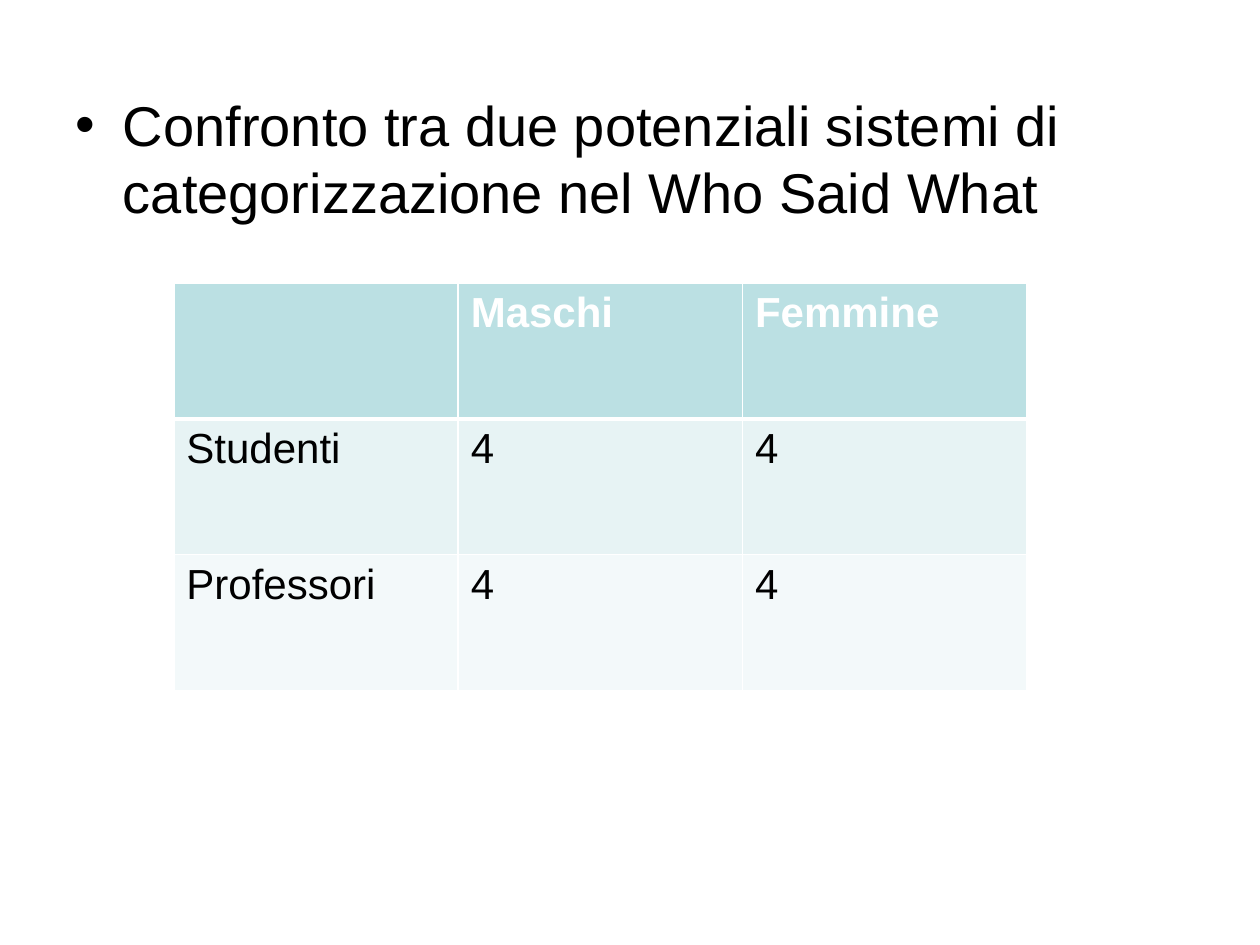
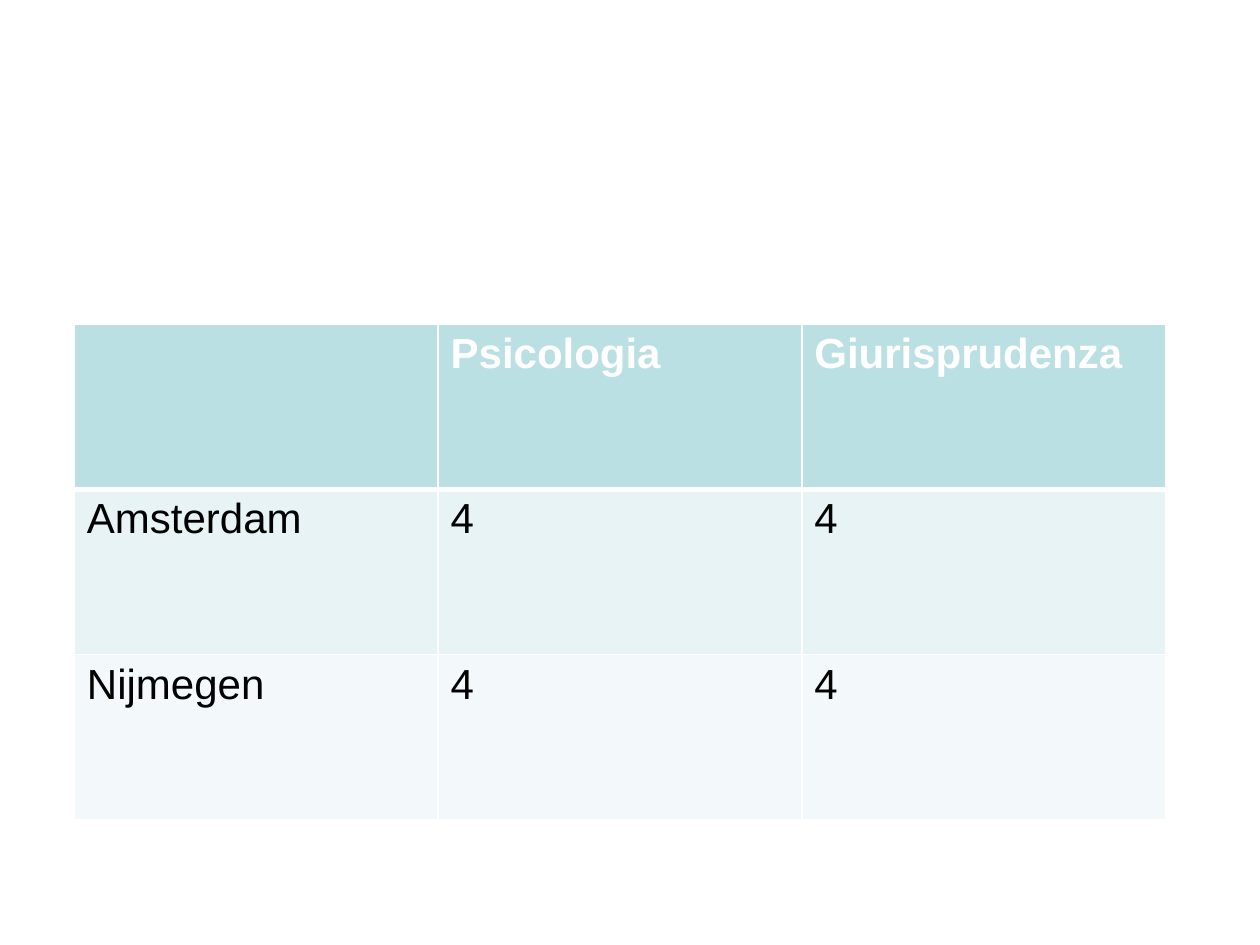
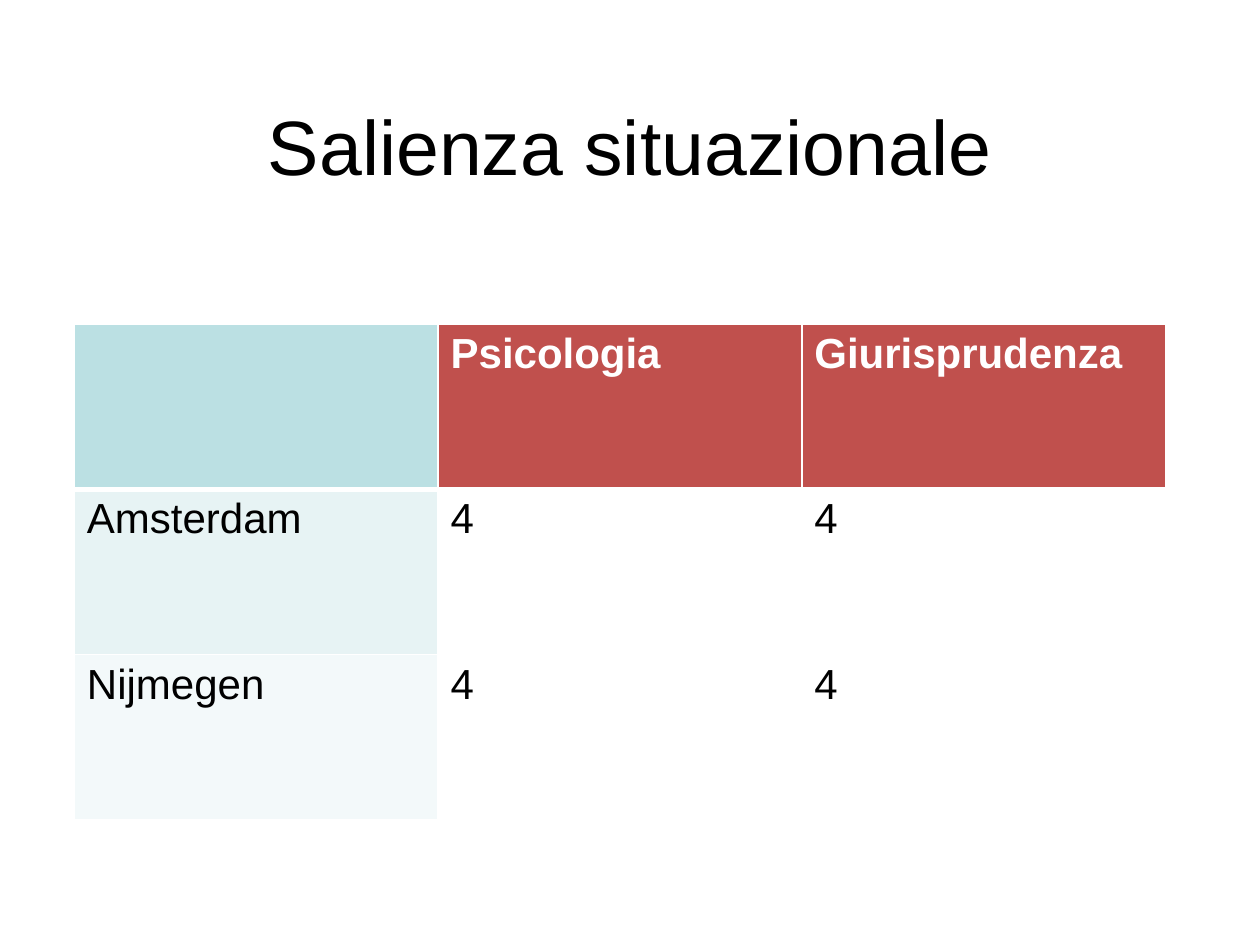
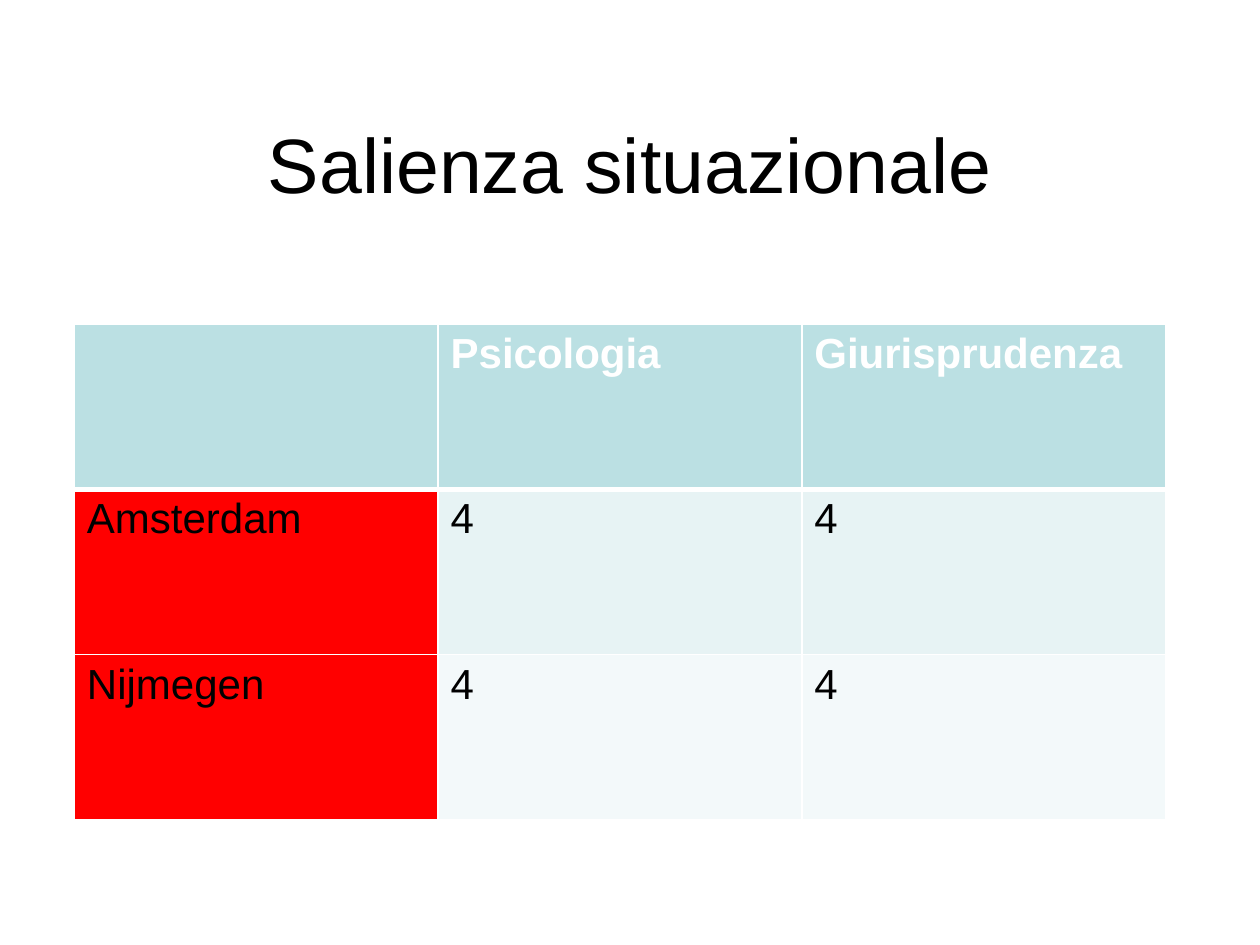
"""Build four slides on crossed categories, each with a three-by-three table."""
from lxml import etree
from pptx import Presentation
from pptx.dml.color import RGBColor
from pptx.enum import text
from pptx.oxml import ns
from pptx.util import Inches, Pt

FONT = "Arial"
BLACK, WHITE = "000000", "FFFFFF"
BANDS = ["BBE0E3", "E7F3F4", "F3F9FA"]
BRICK, RED = "C0504D", "FF0000"
BODY, TITLE, BLANK = 1, 5, 6

ROLES = [["", "Maschi", "Femmine"], ["Studenti", "4", "4"], ["Professori", "4", "4"]]
CITIES = [["", "Psicologia", "Giurisprudenza"], ["Amsterdam", "4", "4"], ["Nijmegen", "4", "4"]]
SMALL = (1.38, 2.25, 6.77, 3.23)
LARGE = (0.59, 2.57, 8.66, 3.94)

PLAIN = [[band] * 3 for band in BANDS]
COLS = [[BANDS[0], BRICK, BRICK], [BANDS[1], None, None], [BANDS[2], None, None]]
ROWS = [PLAIN[0], [RED] + PLAIN[1][1:], [RED] + PLAIN[2][1:]]

POINT = "Confronto tra due potenziali sistemi di categorizzazione nel Who Said What"
HEAD = "Salienza situazionale"

SLIDES = [
    dict(kind=BODY, words=POINT, box=(0.5, 0.67, 9.07, 6.63), rows=ROLES, area=SMALL, fills=PLAIN),
    dict(kind=BLANK, rows=CITIES, area=LARGE, fills=PLAIN),
    dict(kind=TITLE, words=HEAD, box=(0.75, 0.52, 8.5, 1.25), rows=CITIES, area=LARGE, fills=COLS),
    dict(kind=TITLE, words=HEAD, box=(0.75, 0.67, 8.5, 1.25), rows=CITIES, area=LARGE, fills=ROWS),
]


def rgb(code):
    """Turn a hex string into a colour."""
    return RGBColor.from_string(code)


def style(frame, size, color, bold=False):
    """Format every run of a text frame."""
    for par in frame.paragraphs:
        for run in par.runs:
            run.font.name = FONT
            run.font.size = Pt(size)
            run.font.bold = bold
            run.font.color.rgb = rgb(color)


def edge(cell, row):
    """Draw white cell borders, thick between the header and the body."""
    widths = {"L": 1, "R": 1, "T": 3 if row == 1 else 1, "B": 3 if row == 0 else 1}
    props = cell._tc.get_or_add_tcPr()
    for side, width in widths.items():
        line = etree.SubElement(props, ns.qn(f"a:ln{side}"), w=str(Pt(width)))
        fill = etree.SubElement(line, ns.qn("a:solidFill"))
        etree.SubElement(fill, ns.qn("a:srgbClr"), val=WHITE)


def add_grid(slide, rows, area, fills):
    """Add a table with equal rows and columns."""
    left, top, width, height = area
    count, span = len(rows), len(rows[0])
    table = slide.shapes.add_table(count, span, *map(Inches, area)).table
    table.horz_banding = False
    for col in table.columns:
        col.width = Inches(width / span)
    for r, line in enumerate(rows):
        table.rows[r].height = Inches(height / count)
        for c, word in enumerate(line):
            cell = table.cell(r, c)
            edge(cell, r)
            if fills[r][c]:
                cell.fill.solid()
                cell.fill.fore_color.rgb = rgb(fills[r][c])
            else:
                cell.fill.background()
            cell.text_frame.text = word
            style(cell.text_frame, 24, BLACK if r else WHITE, r == 0)


def add_words(slide, kind, words, box):
    """Fill the title or the body placeholder."""
    title = slide.shapes.title
    shape = title
    if kind == BODY:
        shape = slide.placeholders[1]
        title._element.getparent().remove(title._element)
    shape.left, shape.top, shape.width, shape.height = map(Inches, box)
    frame = shape.text_frame
    frame.text = words
    if kind == TITLE:
        frame.vertical_anchor = text.MSO_ANCHOR.MIDDLE
        frame.paragraphs[0].alignment = text.PP_ALIGN.CENTER
    style(frame, 44 if kind == TITLE else 32, BLACK)


def main():
    """Build and save the deck."""
    deck = Presentation()
    deck.slide_width, deck.slide_height = Inches(10), Inches(7.5)
    for item in SLIDES:
        slide = deck.slides.add_slide(deck.slide_layouts[item["kind"]])
        if "words" in item:
            add_words(slide, item["kind"], item["words"], item["box"])
        add_grid(slide, item["rows"], item["area"], item["fills"])
    deck.save("out.pptx")


if __name__ == "__main__":
    main()
